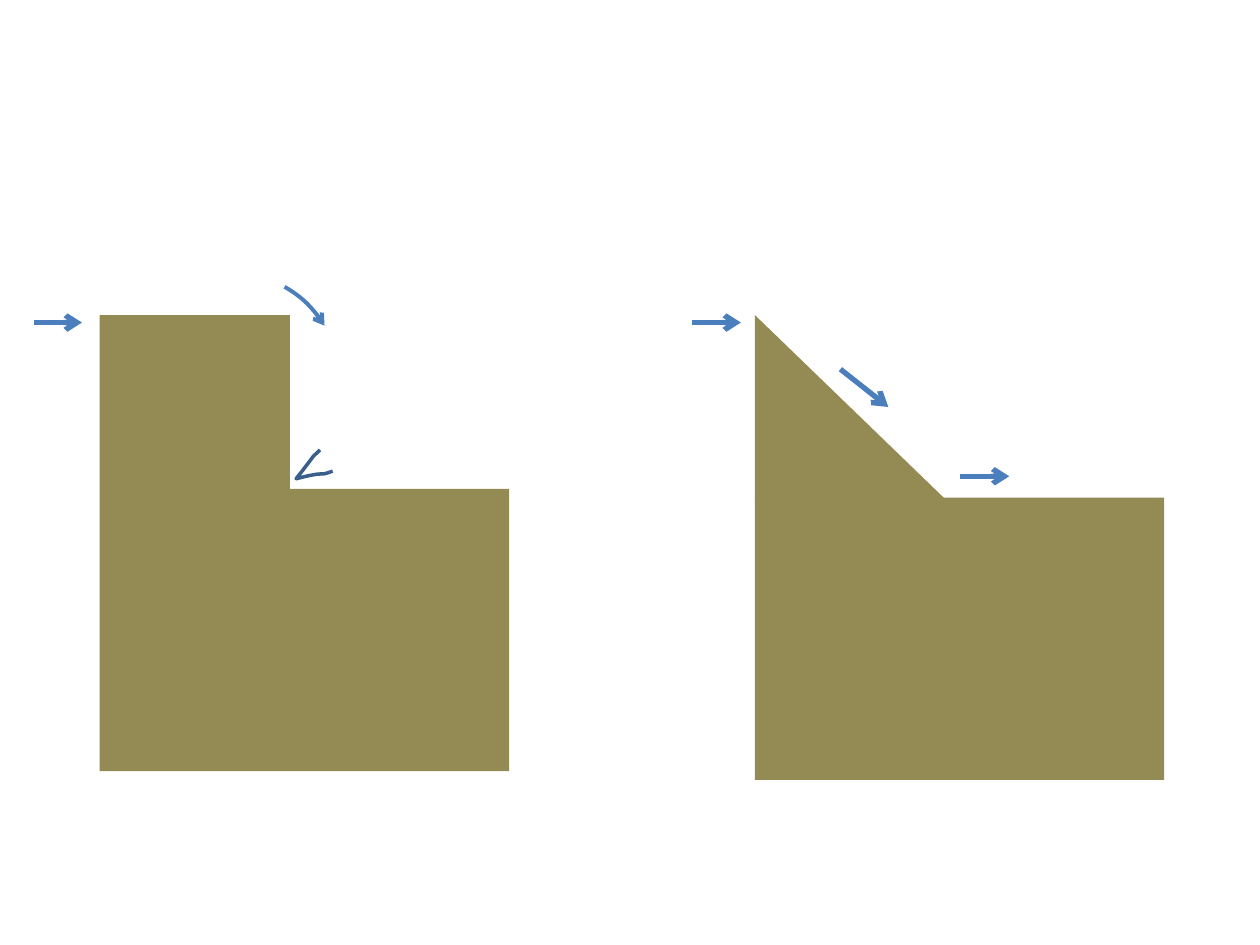
from lxml.etree import SubElement
from pptx import Presentation
from pptx.dml.color import RGBColor
from pptx.enum.shapes import MSO_CONNECTOR, MSO_SHAPE
from pptx.oxml.ns import qn
from pptx.util import Inches, Pt

COLORS = {"earth": "948A54", "flow": "4B7EBC", "eddy": "3A5F8C"}
COLUMNS, ROWS = 1000, 750
LEFT_STEP, RIGHT_STEP = 79, 599
BASE_WIDTH, BASE_HEIGHT, STEP_WIDTH = 325, 224, 151

BLOCKS = [
    (MSO_SHAPE.RECTANGLE, LEFT_STEP, 388, BASE_WIDTH, BASE_HEIGHT),
    (MSO_SHAPE.RECTANGLE, RIGHT_STEP, 395, BASE_WIDTH, BASE_HEIGHT),
    (MSO_SHAPE.ISOSCELES_TRIANGLE, RIGHT_STEP, 250, STEP_WIDTH, 146),
    (MSO_SHAPE.RECTANGLE, LEFT_STEP, 250, STEP_WIDTH, 138),
]
FLOW_ARROWS = [
    (27, 256, 65, 256),
    (549, 256, 588, 256),
    (667, 293, 705, 323),
    (762, 378, 801, 378),
]
FLOW_ARC = (87, 215, 184, 181)
ARC_DEGREES = (301.07, 329.09)
EDDY_CURVES = [
    [(254, 357), (244, 367), (254, 356), (235, 380)],
    [(235, 380), (262, 373), (250, 379), (264, 374)],
]
CURVE_STEPS = 12

deck = Presentation()
deck.slide_width, deck.slide_height = Inches(10), Inches(7.5)
page = deck.slides.add_slide(deck.slide_layouts[6])


def place(column, row):
    return (round(deck.slide_width * column / COLUMNS),
            round(deck.slide_height * row / ROWS))


def add_block(kind, column, row, width, height):
    block = page.shapes.add_shape(kind, *place(column, row), *place(width, height))
    block.shadow.inherit = False
    return block


def style_line(shape, color, width):
    shape.line.color.rgb = RGBColor.from_string(COLORS[color])
    shape.line.width = Pt(width)


def add_arrowhead(shape):
    SubElement(shape.line._get_or_add_ln(), qn("a:tailEnd"), type="arrow")


def curve_point(points, share):
    weights = ((1 - share) ** 3, 3 * share * (1 - share) ** 2,
               3 * share ** 2 * (1 - share), share ** 3)
    return place(*(sum(weight * value for weight, value in zip(weights, axis))
                   for axis in zip(*points)))


for kind, *cell in BLOCKS:
    block = add_block(kind, *cell)
    block.fill.solid()
    block.fill.fore_color.rgb = RGBColor.from_string(COLORS["earth"])
    block.line.fill.background()
    if kind == MSO_SHAPE.ISOSCELES_TRIANGLE:
        block.adjustments[0] = 0

for start_column, start_row, end_column, end_row in FLOW_ARROWS:
    arrow = page.shapes.add_connector(
        MSO_CONNECTOR.STRAIGHT, *place(start_column, start_row),
        *place(end_column, end_row))
    style_line(arrow, "flow", 3)
    add_arrowhead(arrow)
    SubElement(arrow._element.spPr, qn("a:effectLst"))

arc = add_block(MSO_SHAPE.ARC, *FLOW_ARC)
for index, degrees in enumerate(ARC_DEGREES):
    arc.adjustments[index] = degrees * 60000 / 100000
arc.fill.background()
style_line(arc, "flow", 2.25)
add_arrowhead(arc)

outline = page.shapes.build_freeform(*place(*EDDY_CURVES[0][0]))
outline.add_line_segments(
    [curve_point(curve, step / CURVE_STEPS)
     for curve in EDDY_CURVES for step in range(1, CURVE_STEPS + 1)],
    close=False)
eddy = outline.convert_to_shape()
eddy.shadow.inherit = False
eddy.fill.background()
style_line(eddy, "eddy", 2)

deck.save("out.pptx")
